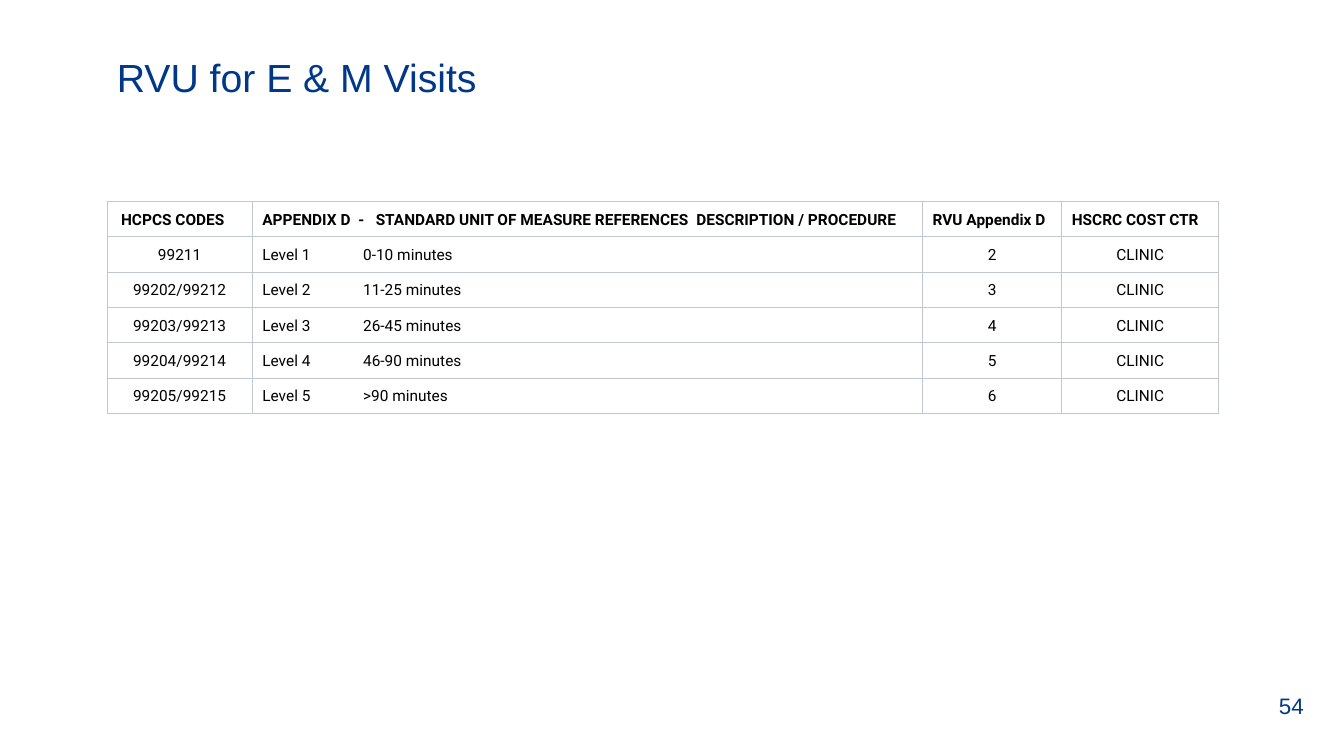
from pptx import Presentation
from pptx.util import Pt
from pptx.dml.color import RGBColor as RGB
from pptx.enum.text import PP_ALIGN as Align, MSO_ANCHOR as Anchor
from pptx.oxml.ns import qn
from lxml.etree import SubElement as Sub

NAVY = RGB(0x00, 0x38, 0x89)
BLACK = RGB(0, 0, 0)
WHITE = RGB(255, 255, 255)
GREY = RGB(0xC1, 0xC7, 0xD0)

WIDTHS = [103.7, 478.8, 99.4, 112.3]
ROW_H = 25.2
HEAD_TABS = [68.5, 81, 310]
BODY_TABS = [72]
ROWS = [
    ("HCPCS CODES",
     "APPENDIX D\t-\tSTANDARD UNIT OF MEASURE REFERENCES\tDESCRIPTION / PROCEDURE",
     "RVU Appendix D", "HSCRC COST CTR"),
    ("99211", "Level 1\t0-10 minutes", "2", "CLINIC"),
    ("99202/99212", "Level 2\t11-25 minutes", "3", "CLINIC"),
    ("99203/99213", "Level 3\t26-45 minutes", "4", "CLINIC"),
    ("99204/99214", "Level 4\t46-90 minutes", "5", "CLINIC"),
    ("99205/99215", "Level 5\t>90 minutes", "6", "CLINIC"),
]


def style(para, name, size, color, bold=False):
    font = para.font
    font.name, font.size, font.bold = name, Pt(size), bold
    font.color.rgb = color


def border(cell):
    props = cell._tc.get_or_add_tcPr()
    for i, side in enumerate(("a:lnL", "a:lnR", "a:lnT", "a:lnB")):
        line = props.makeelement(qn(side), {"w": str(Pt(0.75))})
        fill = Sub(line, qn("a:solidFill"))
        Sub(fill, qn("a:srgbClr"), val=str(GREY))
        props.insert(i, line)


deck = Presentation()
deck.slide_width, deck.slide_height = Pt(960), Pt(540)
slide = deck.slides.add_slide(deck.slide_layouts[5])

# Title
title = slide.shapes.title
title.left, title.top, title.width, title.height = Pt(76.3), Pt(31), Pt(828), Pt(47.5)
title.text_frame.text = "RVU for E & M Visits"
title.text_frame.vertical_anchor = Anchor.MIDDLE
head = title.text_frame.paragraphs[0]
head.alignment = Align.LEFT
style(head, "Arial", 28, NAVY)

# Table of visit levels
frame = slide.shapes.add_table(len(ROWS), len(WIDTHS), Pt(76.5), Pt(144),
                               Pt(sum(WIDTHS)), Pt(ROW_H * len(ROWS)))
table = frame.table
table.first_row = table.horz_banding = False
for col, width in zip(table.columns, WIDTHS):
    col.width = Pt(width)
for r, row in enumerate(ROWS):
    table.rows[r].height = Pt(ROW_H)
    for c, text in enumerate(row):
        cell = table.cell(r, c)
        cell.text = text
        cell.margin_left = Pt(10 if r == c == 0 else 7.2)
        cell.margin_right = Pt(7.2)
        cell.margin_top = cell.margin_bottom = Pt(4.8)
        cell.fill.solid()
        cell.fill.fore_color.rgb = WHITE
        border(cell)
        para = cell.text_frame.paragraphs[0]
        para.line_spacing = 1.15
        para.alignment = Align.CENTER if r and c != 1 else Align.LEFT
        if c == 1:
            tabs = Sub(para._p.get_or_add_pPr(), qn("a:tabLst"))
            for pos in BODY_TABS if r else HEAD_TABS:
                Sub(tabs, qn("a:tab"), pos=str(Pt(pos)), algn="l")
        style(para, "Roboto", 11, BLACK, r == 0)

# Page number
page = slide.shapes.add_textbox(Pt(906.5), Pt(489.6), Pt(45.4), Pt(28.8)).text_frame
page.word_wrap = True
page.vertical_anchor = Anchor.MIDDLE
page.text = "54"
style(page.paragraphs[0], "Arial", 16, NAVY)

deck.save("out.pptx")
